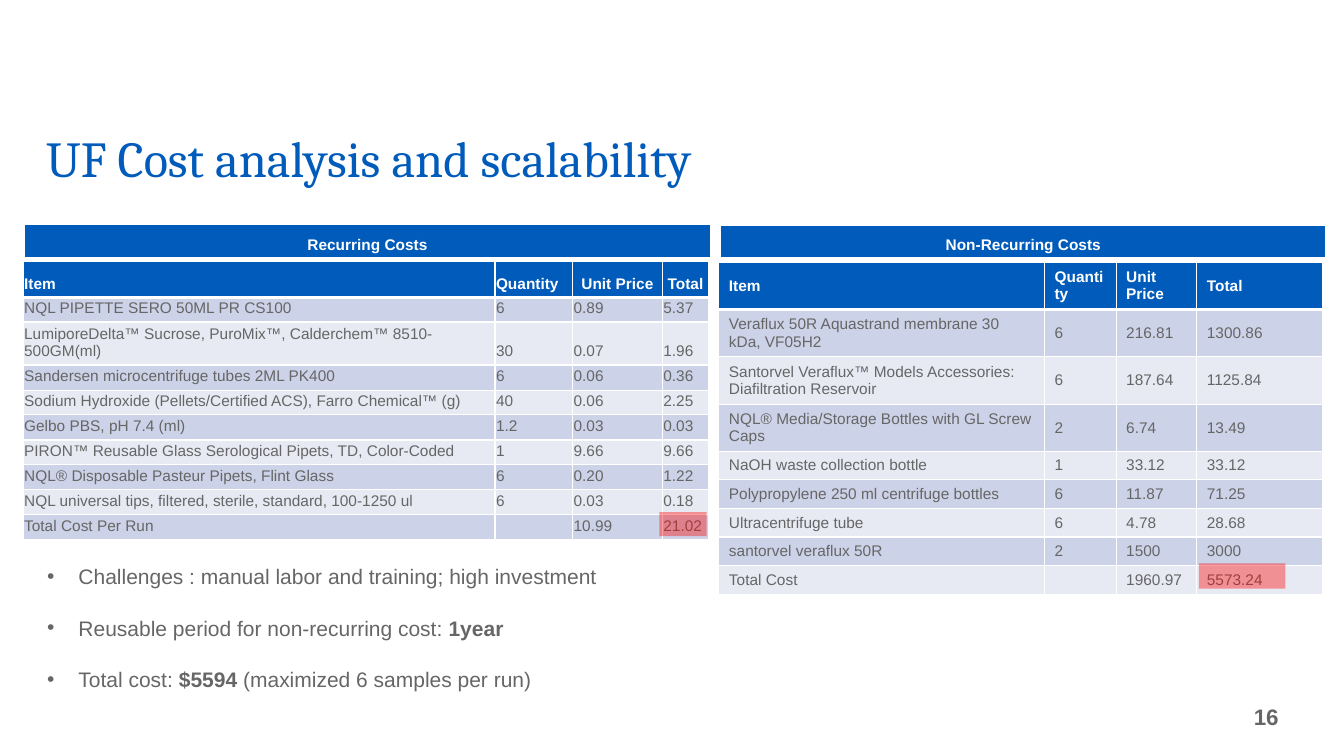
"""Build the UF cost analysis and scalability slide."""
from lxml.etree import SubElement
from pptx import Presentation
from pptx.dml.color import RGBColor
from pptx.enum.shapes import MSO_SHAPE
from pptx.enum.text import MSO_ANCHOR, PP_ALIGN
from pptx.oxml.ns import qn
from pptx.util import Pt

PX = 9144
BLUE = RGBColor(0x00, 0x5B, 0xBB)
GRAY = RGBColor(0x66, 0x66, 0x66)
WHITE = RGBColor(0xFF, 0xFF, 0xFF)
RED = RGBColor(0xFF, 0x00, 0x00)
BANDS = [RGBColor(0xE7, 0xEA, 0xF3), RGBColor(0xCC, 0xD2, 0xE7)]


def write(p, text, size=11, color=GRAY, bold=False, font="Arial", align=PP_ALIGN.LEFT):
    p.alignment = align
    if not text:
        SubElement(p._p, qn("a:endParaRPr"), sz=str(size * 100))
        return
    r = p.add_run()
    r.text = text
    r.font.size = Pt(size)
    r.font.name = font
    r.font.bold = bold
    r.font.color.rgb = color


def add_borders(cell, bottom):
    tc_pr = cell._tc.get_or_add_tcPr()
    for side, width in (("L", 1), ("R", 1), ("T", 1), ("B", bottom)):
        ln = SubElement(tc_pr, qn(f"a:ln{side}"), w=str(Pt(width)))
        fill = SubElement(ln, qn("a:solidFill"))
        SubElement(fill, qn("a:srgbClr"), val=str(WHITE))


prs = Presentation()
prs.slide_width = 1333 * PX
prs.slide_height = 750 * PX
s = prs.slides.add_slide(prs.slide_layouts[6])

number = s.shapes.add_textbox(828 * PX, 691 * PX, 450 * PX, 40 * PX)
tf = number.text_frame
tf.word_wrap = True
tf.vertical_anchor = MSO_ANCHOR.MIDDLE
write(tf.paragraphs[0], "16", size=16, bold=True, align=PP_ALIGN.RIGHT)

title = s.shapes.add_textbox(36 * PX, 121 * PX, 811 * PX, 71 * PX)
tf = title.text_frame
tf.word_wrap = True
write(tf.paragraphs[0], "UF Cost analysis and scalability", size=36, color=BLUE, font="Cambria")

bullets = [
    [("Challenges : manual labor and training; high investment", False)],
    [("Reusable period for non-recurring cost: ", False), ("1year", True)],
    [("Total cost: ", False), ("$5594 ", True), ("(maximized 6 samples per run)", False)],
]
notes = s.shapes.add_textbox(37 * PX, 554 * PX, 640 * PX, 136 * PX)
tf = notes.text_frame
tf.word_wrap = True
for i, runs in enumerate(bullets):
    p = tf.add_paragraph() if i else tf.paragraphs[0]
    p_pr = p._p.get_or_add_pPr()
    p_pr.set("marL", str(31 * PX))
    p_pr.set("indent", str(-31 * PX))
    SubElement(p_pr, qn("a:buFont"), typeface="Arial")
    SubElement(p_pr, qn("a:buChar"), char="•")
    if i:
        p.space_before = Pt(19)
    for text, bold in runs:
        write(p, text, size=15, bold=bold)

header = ["Item", "Quantity", "Unit Price", "Total"]
recurring = [
    header,
    ["NQL PIPETTE SERO 50ML PR CS100", "6", "0.89", "5.37"],
    ["LumiporeDelta™ Sucrose, PuroMix™, Calderchem™ 8510-500GM(ml)", "30", "0.07", "1.96"],
    ["Sandersen microcentrifuge tubes 2ML PK400", "6", "0.06", "0.36"],
    ["Sodium Hydroxide (Pellets/Certified ACS), Farro Chemical™ (g)", "40", "0.06", "2.25"],
    ["Gelbo PBS, pH 7.4 (ml)", "1.2", "0.03", "0.03"],
    ["PIRON™ Reusable Glass Serological Pipets, TD, Color-Coded", "1", "9.66", "9.66"],
    ["NQL® Disposable Pasteur Pipets, Flint Glass", "6", "0.20", "1.22"],
    ["NQL universal tips, filtered, sterile, standard, 100-1250 ul", "6", "0.03", "0.18"],
    ["Total Cost Per Run", "", "10.99", "21.02"],
]
non_recurring = [
    header,
    ["Veraflux 50R Aquastrand membrane 30 kDa, VF05H2", "6", "216.81", "1300.86"],
    ["Santorvel Veraflux™ Models Accessories: Diafiltration Reservoir", "6", "187.64", "1125.84"],
    ["NQL® Media/Storage Bottles with GL Screw Caps", "2", "6.74", "13.49"],
    ["NaOH waste collection bottle", "1", "33.12", "33.12"],
    ["Polypropylene 250 ml centrifuge bottles", "6", "11.87", "71.25"],
    ["Ultracentrifuge tube", "6", "4.78", "28.68"],
    ["santorvel veraflux 50R", "2", "1500", "3000"],
    ["Total Cost", "", "1960.97", "5573.24"],
]
tables = [
    (23, 259, [468, 77, 89, 46], [36, 24, 42, 25, 24, 25, 24, 25, 24, 25], recurring, True, (2, 3)),
    (24, 223, [681], [34], [["Recurring Costs"]], True, (0,)),
    (713, 260, [323, 71, 80, 125], [47] * 3 + [46] + [28] * 5, non_recurring, False, ()),
    (715, 224, [600], [33], [["Non-Recurring Costs"]], True, (0,)),
]
for x, y, widths, heights, rows, tight, centered in tables:
    frame = s.shapes.add_table(len(rows), len(widths), x * PX, y * PX,
                               sum(widths) * PX, sum(heights) * PX)
    table = frame.table
    for column, width in zip(table.columns, widths):
        column.width = width * PX
    for i, (row, height) in enumerate(zip(rows, heights)):
        table.rows[i].height = height * PX
        for j, text in enumerate(row):
            cell = table.cell(i, j)
            is_header = i == 0
            if tight:
                cell.margin_left = cell.margin_right = cell.margin_top = PX
                cell.margin_bottom = 5 * PX
            cell.vertical_anchor = MSO_ANCHOR.BOTTOM if tight else MSO_ANCHOR.MIDDLE
            add_borders(cell, 3 if is_header else 1)
            cell.fill.solid()
            cell.fill.fore_color.rgb = BLUE if is_header else BANDS[i % 2]
            write(cell.text_frame.paragraphs[0], text, bold=is_header,
                  color=WHITE if is_header else GRAY,
                  align=PP_ALIGN.CENTER if is_header and j in centered else PP_ALIGN.LEFT)

for x, y, width, height in ((1189, 559, 86, 25), (654, 508, 47, 24)):
    sp = s.shapes.add_shape(MSO_SHAPE.RECTANGLE, x * PX, y * PX, width * PX, height * PX)
    sp.shadow.inherit = False
    sp.line.fill.background()
    sp.fill.solid()
    sp.fill.fore_color.rgb = RED
    color = sp._element.spPr.find(f"{qn('a:solidFill')}/{qn('a:srgbClr')}")
    SubElement(color, qn("a:alpha"), val="39000")

prs.save("out.pptx")
